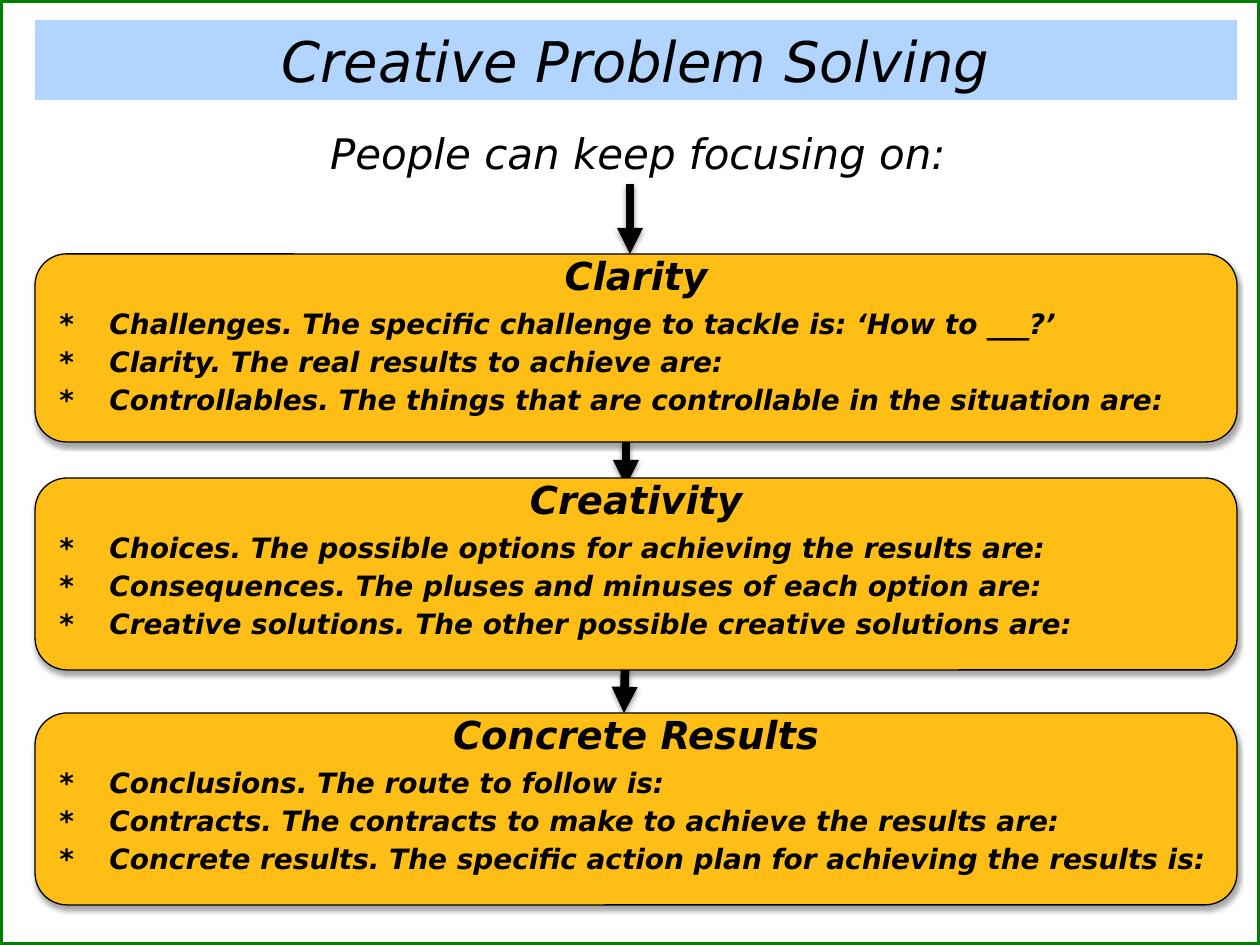
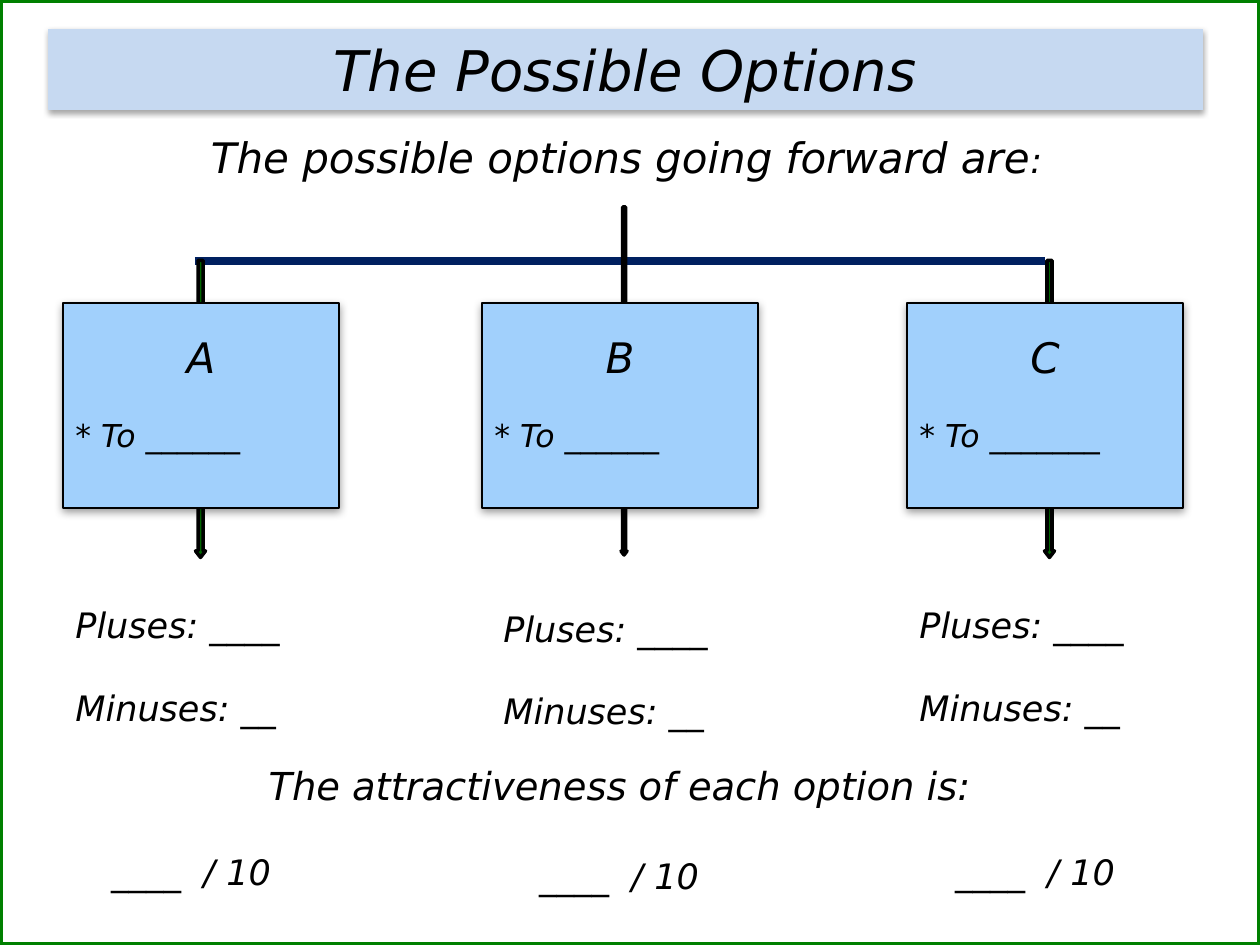
import pptx
import pptx.util
import pptx.dml.color
import pptx.enum.shapes
import pptx.enum.text
import pptx.oxml.ns
from lxml import etree

PX = 914400 / 126  # EMU in one px
FONT = "DejaVu Sans"
BLACK = "000000"
GREEN = "008000"
GOLD = "FEBE15"
SKY = "A1D0FC"
NAVY = "002060"
ARROW_GREEN = "006600"

# Shadows: opacity in percent, blur and distance in points
CARD_SHADOW = (35, 3.1, 1.8)
ARROW_SHADOW = (38, 3.1, 1.6)
OPTION_SHADOW = (38, 5, 1.6)

SHAPE = pptx.enum.shapes.MSO_SHAPE
STRAIGHT = pptx.enum.shapes.MSO_CONNECTOR.STRAIGHT
CENTER = pptx.enum.text.PP_ALIGN.CENTER
LEFT = pptx.enum.text.PP_ALIGN.LEFT
Pt = pptx.util.Pt
qn = pptx.oxml.ns.qn


def paint(color_format, color):
    """Set a fill or line fill to a hex colour, or to nothing."""
    if color is None:
        color_format.background()
    else:
        color_format.solid()
        color_format.fore_color.rgb = pptx.dml.color.RGBColor.from_string(color)


def write(frame, text, size, bold=False, align=LEFT, spacing=None, before=0,
          hanging=False, same_line=False):
    """Add a paragraph, or a run to the last one, and return nothing."""
    frame.word_wrap = True
    frame.vertical_anchor = pptx.enum.text.MSO_ANCHOR.TOP
    para = frame.paragraphs[-1]
    if para.runs and not same_line:
        para = frame.add_paragraph()
    if not same_line:
        para.alignment = align
        para.space_before = Pt(before)
        if spacing:
            para.line_spacing = Pt(spacing)
        if hanging:
            para_format = para._p.get_or_add_pPr()
            para_format.set("marL", str(round(62 * PX)))
            para_format.set("indent", str(round(-50 * PX)))
    span = para.add_run()
    span.text = text
    span.font.name = FONT
    span.font.size = Pt(size)
    span.font.bold = bold
    span.font.italic = True
    paint(span.font.fill, BLACK)


deck = pptx.Presentation()
deck.slide_width = round(1260 * PX)
deck.slide_height = round(945 * PX)
looks = []  # (object, fill, line colour, line width, shadow)

# Both slides: green frame, title band, subtitle
headings = [
    ("Creative Problem Solving", (35, 20, 1202, 80), "B1D5FF", None,
     "People can keep focusing on:", (62, 121, 1152, 63)),
    ("The Possible Options", (48, 29, 1155, 81), "C6D9F1", CARD_SHADOW,
     "The possible options going forward are", (49, 125, 1155, 63)),
]
pages = []
subtitles = []
for title, band_place, band_color, shadow, subtitle, subtitle_place in headings:
    page = deck.slides.add_slide(deck.slide_layouts[6])
    border = page.shapes.add_shape(
        SHAPE.RECTANGLE, 0, 0, deck.slide_width, deck.slide_height)
    looks.append((border, None, GREEN, 3, None))
    band = page.shapes.add_shape(
        SHAPE.RECTANGLE, *[round(n * PX) for n in band_place])
    looks.append((band, band_color, None, 0, shadow))
    write(band.text_frame, title, 32, align=CENTER)
    box = page.shapes.add_textbox(*[round(n * PX) for n in subtitle_place])
    write(box.text_frame, subtitle, 24, align=CENTER)
    pages.append(page)
    subtitles.append(box.text_frame)

steps_page, options_page = pages
write(subtitles[1], ":", 20, same_line=True)

# Slide 1: three cards, each with an arrow leading into it
steps = [
    ("Clarity", 254, 188, (630, 184, 630, 254), [
        "Challenges. The specific challenge to tackle is: ‘How to ___?’",
        "Clarity. The real results to achieve are:",
        "Controllables. The things that are controllable in the situation are:"]),
    ("Creativity", 478, 192, (626, 442, 626, 486), [
        "Choices. The possible options for achieving the results are:",
        "Consequences. The pluses and minuses of each option are:",
        "Creative solutions. The other possible creative solutions are:"]),
    ("Concrete Results", 713, 192, (625, 670, 624, 713), [
        "Conclusions. The route to follow is:",
        "Contracts. The contracts to make to achieve the results are:",
        "Concrete results. The specific action plan for achieving the results is:"]),
]
for name, top, height, ends, points in steps:
    arrow = steps_page.shapes.add_connector(
        STRAIGHT, *[round(n * PX) for n in ends])
    looks.append((arrow, None, BLACK, 5, ARROW_SHADOW))
    etree.SubElement(arrow.line._get_or_add_ln(), qn("a:tailEnd"), type="triangle")

    card = steps_page.shapes.add_shape(
        SHAPE.ROUNDED_RECTANGLE,
        *[round(n * PX) for n in (35, top, 1202, height)])
    looks.append((card, GOLD, BLACK, 0.75, CARD_SHADOW))

    box = steps_page.shapes.add_textbox(
        *[round(n * PX) for n in (35, top, 1202, 210)])
    write(box.text_frame, name, 22, bold=True, align=CENTER, spacing=21.8)
    for index, point in enumerate(points):
        write(box.text_frame, "*\t" + point, 16, bold=True, hanging=True,
              spacing=21.8 if index else 23.8)

# Slide 2: bar that joins the three options
bar = options_page.shapes.add_connector(
    STRAIGHT, *[round(n * PX) for n in (195, 261, 1045, 261)])
looks.append((bar, None, NAVY, 4.75, None))

# Slide 2: arrow, option box and rating column for each option
options = [
    ("A", "* To ______", 63, (52, 404, 297, 10), (63, 597)),
    ("B", "* To ______", 482, (450, 378, 348, 6), (491, 601)),
    ("C", "* To _______", 907, (901, 404, 297, 10), (907, 597)),
]
for letter, goal, left, arrow_place, rating_corner in options:
    arrow = options_page.shapes.add_shape(
        SHAPE.RIGHT_ARROW, *[round(n * PX) for n in arrow_place])
    arrow.rotation = 90
    arrow.adjustments[0] = 0.5
    arrow.adjustments[1] = 0.65
    looks.append((arrow, ARROW_GREEN, BLACK, 2, None))

    option = options_page.shapes.add_shape(
        SHAPE.RECTANGLE, *[round(n * PX) for n in (left, 303, 276, 205)])
    option.text_frame.margin_top = round(42 * PX)
    looks.append((option, SKY, BLACK, 1, OPTION_SHADOW))
    write(option.text_frame, letter, 24, align=CENTER, spacing=20.8)
    write(option.text_frame, goal, 18, spacing=20.8, before=20.8)

    rating = options_page.shapes.add_textbox(
        *[round(n * PX) for n in (*rating_corner, 256, 310)])
    write(rating.text_frame, "Pluses: ____", 20)
    write(rating.text_frame, "Minuses: __", 20, before=23.3)
    write(rating.text_frame, "____  / 10", 20, align=CENTER, before=69.9)

# Slide 2: question above the ratings
question = options_page.shapes.add_textbox(
    *[round(n * PX) for n in (108, 756, 1023, 59)])
write(question.text_frame, "The attractiveness of each option is:", 22, align=CENTER)

# Fill, line and shadow of every shape and connector
for item, fill, line_color, line_width, shadow in looks:
    if hasattr(item, "fill"):
        paint(item.fill, fill)
    paint(item.line.fill, line_color)
    if line_color:
        item.line.width = Pt(line_width)
    effects = etree.SubElement(item._element.spPr, qn("a:effectLst"))
    if shadow:
        opacity, blur, distance = shadow
        outer = etree.SubElement(
            effects, qn("a:outerShdw"), blurRad=str(Pt(blur)),
            dist=str(Pt(distance)), dir="5400000", rotWithShape="0")
        tint = etree.SubElement(outer, qn("a:srgbClr"), val=BLACK)
        etree.SubElement(tint, qn("a:alpha"), val=str(opacity * 1000))

deck.save("out.pptx")
